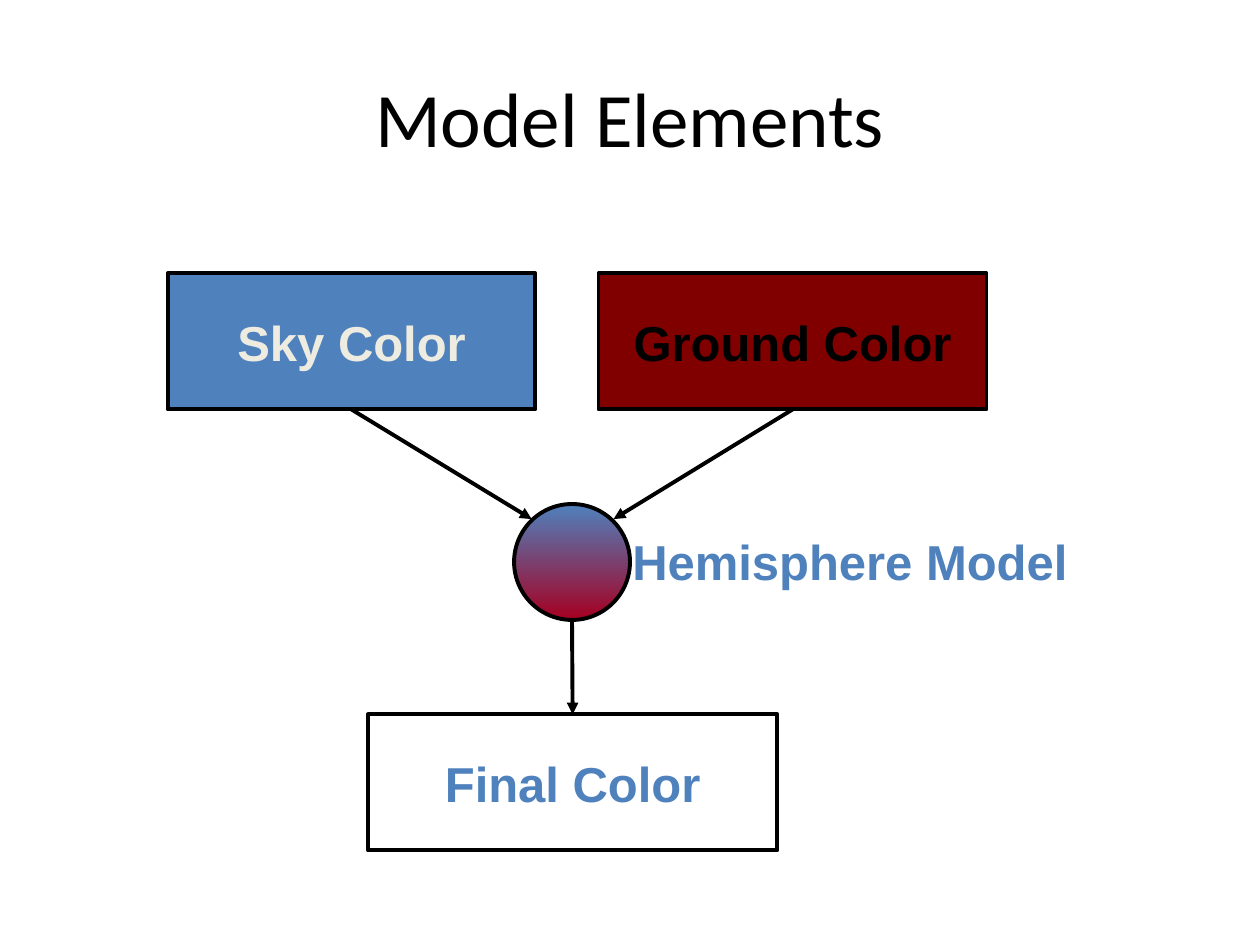
from dataclasses import dataclass

from lxml.etree import SubElement
from pptx import Presentation
from pptx.dml.color import RGBColor
from pptx.enum.shapes import MSO_CONNECTOR as Connector, MSO_SHAPE as Shape
from pptx.enum.text import MSO_ANCHOR as Anchor, PP_ALIGN as Align
from pptx.oxml.ns import qn
from pptx.util import Inches, Pt

COLORS = {
    "black": "000000",
    "white": "FFFFFF",
    "sky": "4F81BD",
    "cream": "EEECE1",
    "ground": "800000",
    "crimson": "A50021",
}
LINE_WIDTH = Pt(2.25)
BOX_HEIGHT = 1.08


@dataclass
class ColorBox:
    text: str
    left: float
    top: float
    width: float
    fill: str
    color: str


SKY = ColorBox("Sky Color", 1.33, 2.17, 2.92, "sky", "cream")
FINAL = ColorBox("Final Color", 2.92, 5.67, 3.25, "white", "sky")
GROUND = ColorBox("Ground Color", 4.75, 2.17, 3.08, "ground", "black")


def rgb(name: str) -> RGBColor:
    return RGBColor.from_string(COLORS[name])


def write_text(shape, text: str, *, color: str, size: int = 28, font: str = "Arial",
               bold: bool = True, align=Align.CENTER, anchor=Anchor.MIDDLE,
               wrap: bool = False) -> None:
    frame = shape.text_frame
    frame.word_wrap = wrap
    frame.vertical_anchor = anchor
    para = frame.paragraphs[0]
    para.alignment = align
    span = para.add_run()
    span.text = text
    span.font.name = font
    span.font.size = Pt(size)
    span.font.bold = bold
    span.font.color.rgb = rgb(color)


def style_line(line) -> None:
    line.color.rgb = rgb("black")
    line.width = LINE_WIDTH


def draw_box(page, box: ColorBox):
    shape = page.shapes.add_shape(Shape.RECTANGLE, Inches(box.left), Inches(box.top),
                                  Inches(box.width), Inches(BOX_HEIGHT))
    shape.shadow.inherit = False
    shape.fill.solid()
    shape.fill.fore_color.rgb = rgb(box.fill)
    style_line(shape.line)
    write_text(shape, box.text, color=box.color)
    return shape


def draw_hemisphere(page) -> None:
    circle = page.shapes.add_shape(Shape.OVAL, Inches(4.08), Inches(4),
                                   Inches(0.92), Inches(0.92))
    circle.shadow.inherit = False
    circle.fill.gradient()
    circle.fill.gradient_angle = 270
    for stop, name in zip(circle.fill.gradient_stops, ("sky", "crimson")):
        stop.color.rgb = rgb(name)
    style_line(circle.line)


def draw_arrow(page, start: tuple[float, float], end: tuple[float, float],
               source=None, target=None) -> None:
    arrow = page.shapes.add_connector(Connector.STRAIGHT, *map(Inches, start + end))
    if source is not None:
        arrow.begin_connect(source, 2)
    if target is not None:
        arrow.end_connect(target, 0)
    style_line(arrow.line)
    SubElement(arrow.line._get_or_add_ln(), qn("a:tailEnd"), type="triangle")
    SubElement(arrow._element.spPr, qn("a:effectLst"))


def main() -> None:
    deck = Presentation()
    deck.slide_width, deck.slide_height = Inches(10), Inches(7.5)
    page = deck.slides.add_slide(deck.slide_layouts[5])

    title = page.shapes.title
    title.left, title.top = Inches(0.5), Inches(0.3)
    title.width, title.height = Inches(9), Inches(1.25)
    write_text(title, "Model Elements", color="black", size=44, font="Calibri",
               bold=False, wrap=True)

    sky, final, ground = [draw_box(page, box) for box in (SKY, FINAL, GROUND)]
    draw_hemisphere(page)
    draw_arrow(page, (2.79, 3.25), (4.22, 4.12), source=sky)
    draw_arrow(page, (6.29, 3.25), (4.87, 4.12), source=ground)
    draw_arrow(page, (4.54, 4.93), (4.54, 5.67), target=final)

    label = page.shapes.add_textbox(Inches(4.92), Inches(4.17), Inches(4.25), Inches(0.57))
    write_text(label, "Hemisphere Model", color="sky", align=Align.LEFT,
               anchor=Anchor.TOP, wrap=True)

    deck.save("out.pptx")


if __name__ == "__main__":
    main()
